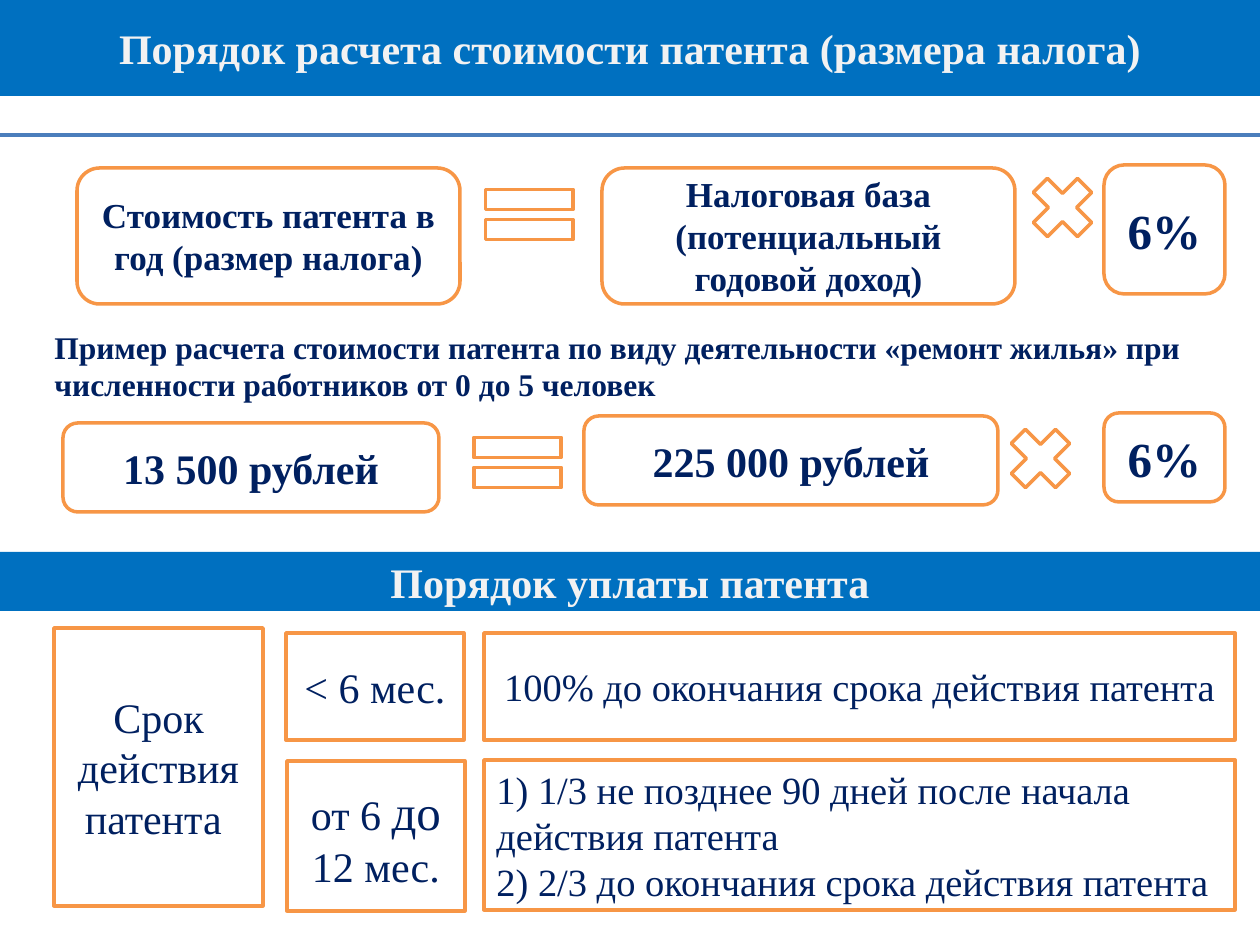
"""Builds a slide on how the cost of a patent is calculated and paid."""
from pptx import Presentation
from pptx.dml.color import RGBColor
from pptx.enum.shapes import MSO_CONNECTOR, MSO_SHAPE
from pptx.enum.text import MSO_ANCHOR, PP_ALIGN
from pptx.oxml.ns import qn
from pptx.util import Pt
from lxml.etree import SubElement

PX = 914400 // 126
FONT = "Times New Roman"
COLORS = {
    "white": "FFFFFF",
    "band": "0070C0",
    "band_text": "F2F2F2",
    "text": "002060",
    "border": "F79646",
    "rule": "4B7EBC",
}


def rgb(name):
    return RGBColor.from_string(COLORS[name])


class SlideBuilder:
    def __init__(self, prs):
        self.s = prs.slides.add_slide(prs.slide_layouts[6])

    def shape(self, kind, at, fill="white", border="border"):
        sp = self.s.shapes.add_shape(kind, *(v * PX for v in at))
        sp.shadow.inherit = False
        sp.fill.solid()
        sp.fill.fore_color.rgb = rgb(fill)
        if border:
            sp.line.color.rgb = rgb(border)
            sp.line.width = Pt(2)
        else:
            sp.line.fill.background()
        return sp

    def style(self, r, size, bold, color="text"):
        r.font.name = FONT
        r.font.size = Pt(size)
        r.font.bold = bold
        r.font.color.rgb = rgb(color)

    def label(self, sp, text, size, bold=False, color="text", align=PP_ALIGN.CENTER):
        tf = sp.text_frame
        tf.word_wrap = True
        tf.vertical_anchor = MSO_ANCHOR.MIDDLE
        tf.text = text
        for p in tf.paragraphs:
            p.alignment = align
            for r in p.runs:
                self.style(r, size, bold, color)

    def add_text(self, sp, text, size):
        r = sp.text_frame.paragraphs[-1].add_run()
        r.text = text
        self.style(r, size, False)

    def band(self, top, height, text):
        sp = self.shape(MSO_SHAPE.RECTANGLE, (0, top, 1260, height), "band", None)
        self.label(sp, text, 24, True, "band_text")

    def card(self, at, text, size):
        sp = self.shape(MSO_SHAPE.ROUNDED_RECTANGLE, at)
        self.label(sp, text, size, True)

    def cell(self, at, text, size, align=PP_ALIGN.CENTER):
        sp = self.shape(MSO_SHAPE.RECTANGLE, at)
        self.label(sp, text, size, align=align)
        return sp

    def caption(self, at, text, size):
        sp = self.shape(MSO_SHAPE.ROUNDED_RECTANGLE, at, border=None)
        self.label(sp, text, size, True, align=PP_ALIGN.LEFT)

    def equals(self, left, top):
        self.shape(MSO_SHAPE.MATH_EQUAL, (left, top, 119, 85))

    def times(self, left, top):
        self.shape(MSO_SHAPE.MATH_MULTIPLY, (left, top, 85, 85))

    def rule(self, top):
        line = self.s.shapes.add_connector(
            MSO_CONNECTOR.STRAIGHT, 0, top * PX, 1260 * PX, top * PX)
        line.line.color.rgb = rgb("rule")
        line.line.width = Pt(2.25)
        SubElement(line._element.spPr, qn("a:effectLst"))


def main():
    prs = Presentation()
    prs.slide_width, prs.slide_height = 1260 * PX, 945 * PX
    b = SlideBuilder(prs)

    b.band(0, 96, "Порядок расчета стоимости патента (размера налога)")
    b.rule(135)

    b.card((77, 168, 383, 136), "Стоимость патента в год (размер налога)", 20)
    b.equals(470, 172)
    b.card((602, 168, 413, 136), "Налоговая база (потенциальный годовой доход)", 20)
    b.times(1020, 165)
    b.card((1104, 165, 121, 129), "6%", 28)

    b.card((63, 423, 376, 89), "13 500 рублей", 24)
    b.equals(458, 420)
    b.card((584, 416, 414, 89), "225 000 рублей", 24)
    b.times(998, 416)
    b.card((1104, 413, 121, 89), "6%", 28)
    b.caption((39, 334, 1221, 63),
              "Пример расчета стоимости патента по виду деятельности "
              "«ремонт жилья» при численности работников от 0 до 5 человек", 18)

    b.cell((54, 628, 209, 278), "Срок действия патента ", 24)
    b.cell((286, 633, 178, 107), "< 6 мес.", 24)
    b.cell((484, 633, 751, 107), "100% до окончания срока действия патента", 22)
    term = b.cell((287, 761, 178, 150), "от 6 ", 24)
    b.add_text(term, "до", 28)
    b.add_text(term, " 12 мес.", 24)
    b.cell((484, 760, 751, 150),
           "1) 1/3 не позднее 90 дней после начала действия патента\n"
           "2) 2/3 до окончания срока действия патента", 22, PP_ALIGN.LEFT)
    b.band(552, 59, "Порядок уплаты патента")

    prs.save("out.pptx")


if __name__ == "__main__":
    main()
